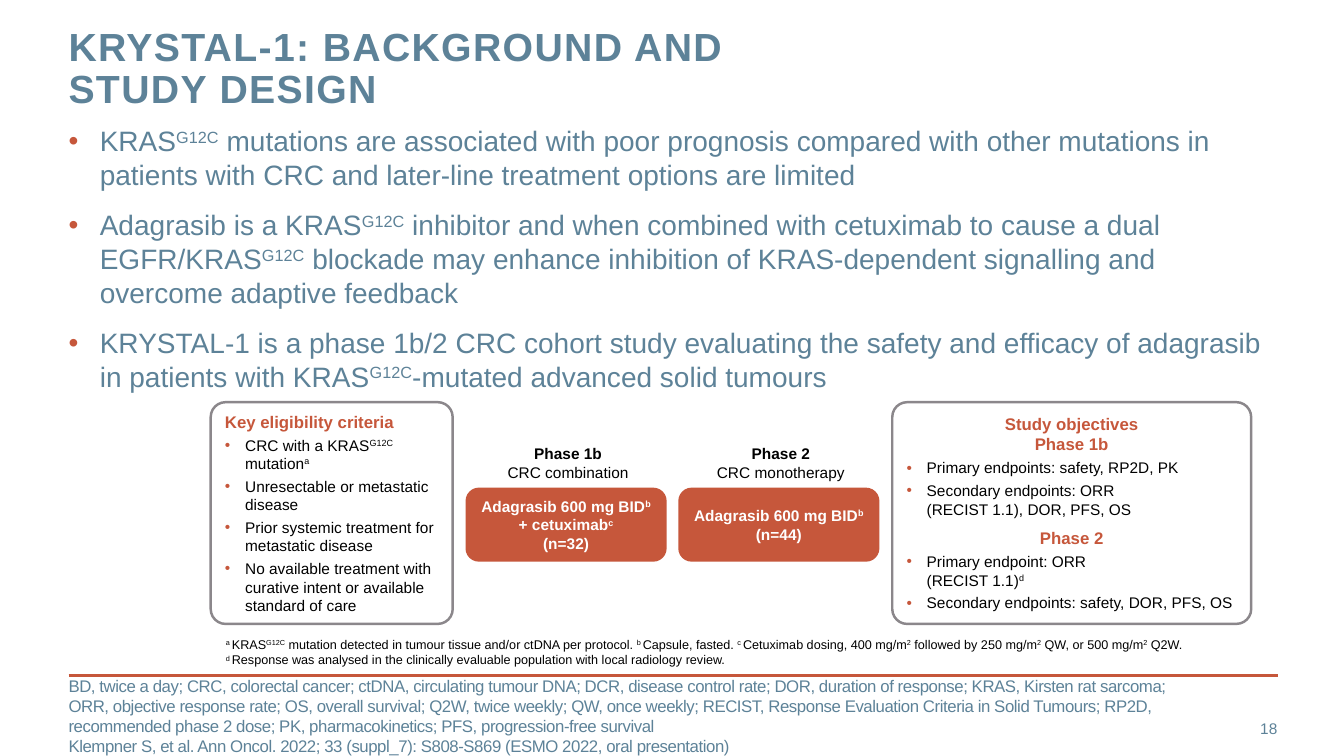
import pptx
import pptx.dml.color
import pptx.enum.shapes
import pptx.enum.text
import pptx.util
from lxml import etree
from pptx.oxml.ns import qn

Inches = pptx.util.Inches
Pt = pptx.util.Pt
ALIGN = pptx.enum.text.PP_ALIGN
ANCHOR = pptx.enum.text.MSO_ANCHOR
SHAPE = pptx.enum.shapes.MSO_SHAPE

COLORS = {"slate": "5D8298", "rust": "C6573B", "grey": "8B878B",
          "white": "FFFFFF", "black": "000000"}


def color(name):
    return pptx.dml.color.RGBColor.from_string(COLORS[name])


class StudySlide:
    def __init__(self, deck):
        self.page = deck.slides.add_slide(deck.slide_layouts[6])
        self.font_name = "Arial"

    def bullet(self, para, indent):
        props = para._p.get_or_add_pPr()
        props.set("marL", str(Inches(indent)))
        props.set("indent", str(-Inches(indent)))
        bullet_color = etree.SubElement(props, qn("a:buClr"))
        etree.SubElement(bullet_color, qn("a:srgbClr")).set("val", COLORS["rust"])
        etree.SubElement(props, qn("a:buFont")).set("typeface", self.font_name)
        etree.SubElement(props, qn("a:buChar")).set("char", "•")

    def spans(self, para, text, size, ink, bold=False, spacing=0):
        """Add text in which ^...^ is superscript, **...** bold and a newline a line break."""
        raised = strong = False
        for strong_index, strong_part in enumerate(text.split("**")):
            strong = bold or strong_index % 2 == 1
            for raised_index, part in enumerate(strong_part.split("^")):
                raised = raised_index % 2 == 1
                for line_index, line in enumerate(part.split("\n")):
                    if line_index:
                        para.add_line_break()
                    if not line:
                        continue
                    span = para.add_run()
                    span.text = line
                    look = {"name": self.font_name, "size": Pt(size), "bold": strong}
                    for key, value in look.items():
                        setattr(span.font, key, value)
                    span.font.color.rgb = color(ink)
                    if raised:
                        span.font._element.set("baseline", "30000")
                    if spacing:
                        span.font._element.set("spc", str(round(spacing * 100)))

    def fill_text(self, box, paragraphs, anchor, insets=None):
        """Write paragraphs, each a (text, span style, paragraph format, bullet indent) tuple."""
        frame = box.text_frame
        frame.word_wrap = True
        frame.vertical_anchor = anchor
        if insets:
            for side, inset in zip(("left", "top", "right", "bottom"), insets):
                setattr(frame, f"margin_{side}", Inches(inset))
        for index, (text, style, layout, indent) in enumerate(paragraphs):
            para = frame.add_paragraph() if index else frame.paragraphs[0]
            if indent:
                self.bullet(para, indent)
            for key, value in {"alignment": ALIGN.LEFT, **layout}.items():
                setattr(para, key, value)
            self.spans(para, text, **style)

    def text(self, place, paragraphs, anchor=ANCHOR.TOP, insets=(0, 0, 0, 0)):
        box = self.page.shapes.add_textbox(*map(Inches, place))
        self.fill_text(box, paragraphs, anchor, insets)

    def card(self, place, paragraphs, fill, edge, radius):
        box = self.page.shapes.add_shape(SHAPE.ROUNDED_RECTANGLE, *map(Inches, place))
        box.adjustments[0] = radius
        box.shadow.inherit = False
        box.fill.solid()
        box.fill.fore_color.rgb = color(fill)
        box.line.color.rgb = color(edge)
        box.line.width = Pt(1.75)
        self.fill_text(box, paragraphs, ANCHOR.MIDDLE)

    def rule(self, left, right, top):
        line = self.page.shapes.add_connector(
            pptx.enum.shapes.MSO_CONNECTOR.STRAIGHT,
            Inches(left), Inches(top), Inches(right), Inches(top))
        line.line.color.rgb = color("rust")
        line.line.width = Pt(2)
        etree.SubElement(line._element.spPr, qn("a:effectLst"))


TITLE = {"size": 28, "ink": "slate", "bold": True, "spacing": 1}
BODY = {"size": 20, "ink": "slate"}
NUMBER = {"size": 11, "ink": "slate"}
SOURCE = {"size": 12, "ink": "slate", "spacing": -0.3}
HEADING = {"size": 12, "ink": "rust", "bold": True}
DETAIL = {"size": 11, "ink": "black"}
DOSE = {"size": 11, "ink": "white", "bold": True}
NOTE = {"size": 9, "ink": "black"}

CENTERED = {"alignment": ALIGN.CENTER}
CARD_GAP = {"space_after": Pt(3)}
NOTE_INSETS = (0.08, 0.04, 0.04, 0.04)

BACKGROUND = [
    "KRAS^G12C^ mutations are associated with poor prognosis compared with other mutations in "
    "patients with CRC and later-line treatment options are limited",
    "Adagrasib is a KRAS^G12C^ inhibitor and when combined with cetuximab to cause a dual "
    "EGFR/KRAS^G12C^ blockade may enhance inhibition of KRAS-dependent signalling and "
    "overcome adaptive feedback",
    "KRYSTAL-1 is a phase 1b/2 CRC cohort study evaluating the safety and efficacy of adagrasib "
    "in patients with KRAS^G12C^-mutated advanced solid tumours",
]
CRITERIA = [
    "CRC with a KRAS^G12C ^mutation^a^",
    "Unresectable or metastatic disease",
    "Prior systemic treatment for metastatic disease",
    "No available treatment with curative intent or available standard of care",
]
PHASE_1B_ENDPOINTS = ["Primary endpoints: safety, RP2D, PK",
                      "Secondary endpoints: ORR \n(RECIST 1.1), DOR, PFS, OS"]
PHASE_2_ENDPOINTS = ["Primary endpoint: ORR \n(RECIST 1.1)^d^",
                     "Secondary endpoints: safety, DOR, PFS, OS"]
ARMS = [
    ("**Phase 1b**\nCRC combination", "Adagrasib 600 mg BID^b^\n+ cetuximab^c^\n(n=32)"),
    ("**Phase 2**\nCRC monotherapy", "Adagrasib 600 mg BID^b^\n(n=44)"),
]
FOOTNOTES = (
    "^a ^KRAS^G12C^ mutation detected in tumour tissue and/or ctDNA per protocol. "
    "^b ^Capsule, fasted. ^c ^Cetuximab dosing, 400 mg/m^2^ followed by 250 mg/m^2^ QW, "
    "or 500 mg/m^2^ Q2W. \n"
    "^d ^Response was analysed in the clinically evaluable population with local radiology review."
)
SOURCES = [
    "BD, twice a day; CRC, colorectal cancer; ctDNA, circulating tumour DNA; DCR, disease control "
    "rate; DOR, duration of response; KRAS, Kirsten rat sarcoma; ORR, objective response rate; "
    "OS, overall survival; Q2W, twice weekly; QW, once weekly; RECIST, Response Evaluation "
    "Criteria in Solid Tumours; RP2D, recommended phase 2 dose; PK, pharmacokinetics; "
    "PFS, progression-free survival",
    "Klempner S, et al. Ann Oncol. 2022; 33 (suppl_7): S808-S869 (ESMO 2022, oral presentation)",
]


def card_bullets(lines):
    return [(line, DETAIL, CARD_GAP, 0.2) for line in lines]


def main():
    deck = pptx.Presentation()
    deck.slide_width, deck.slide_height = Inches(13.33), Inches(7.5)
    slide = StudySlide(deck)

    slide.rule(0.68, 12.68, 6.7)
    slide.text((0.68, 1.23, 11.99, 2.74),
               [(line, BODY, {"space_before": Pt(12 if index else 0)}, 0.31)
                for index, line in enumerate(BACKGROUND)])
    slide.text((0.68, 0.27, 9.93, 0.88),
               [("KRYSTAL-1: BACKGROUND AND \nSTUDY DESIGN", TITLE,
                 {"line_spacing": Pt(30)}, 0)])
    slide.text((11.81, 7.03, 0.86, 0.4),
               [("18", NUMBER, {"alignment": ALIGN.RIGHT}, 0)], ANCHOR.MIDDLE)
    slide.text((0.68, 6.9, 11.13, 0.4),
               [(line, SOURCE, {}, 0) for line in SOURCES], ANCHOR.MIDDLE)

    slide.card((2.09, 3.99, 2.4, 2.2),
               [("Key eligibility criteria", HEADING, CARD_GAP, 0)] + card_bullets(CRITERIA),
               "white", "grey", 0.067)
    centered_gap = {**CENTERED, **CARD_GAP}
    objectives = [
        ("Study objectives\nPhase 1b", HEADING, centered_gap, 0),
        *card_bullets(PHASE_1B_ENDPOINTS),
        ("Phase 2", HEADING, {**centered_gap, "space_before": Pt(4)}, 0),
        *card_bullets(PHASE_2_ENDPOINTS),
    ]
    slide.card((8.85, 3.99, 3.56, 2.2), objectives, "white", "grey", 0.067)

    for index, (phase, dose) in enumerate(ARMS):
        left = 4.63 + 2.11 * index
        slide.card((left, 4.85, 1.97, 0.71), [(dose, DOSE, centered_gap, 0)],
                   "rust", "rust", 0.169)
        slide.text((left, 4.37, 1.97, 0.45), [(phase, DETAIL, CENTERED, 0)],
                   insets=NOTE_INSETS)
    slide.text((2.16, 6.28, 10.08, 0.38), [(FOOTNOTES, NOTE, {}, 0)], insets=NOTE_INSETS)

    deck.save("out.pptx")


if __name__ == "__main__":
    main()
